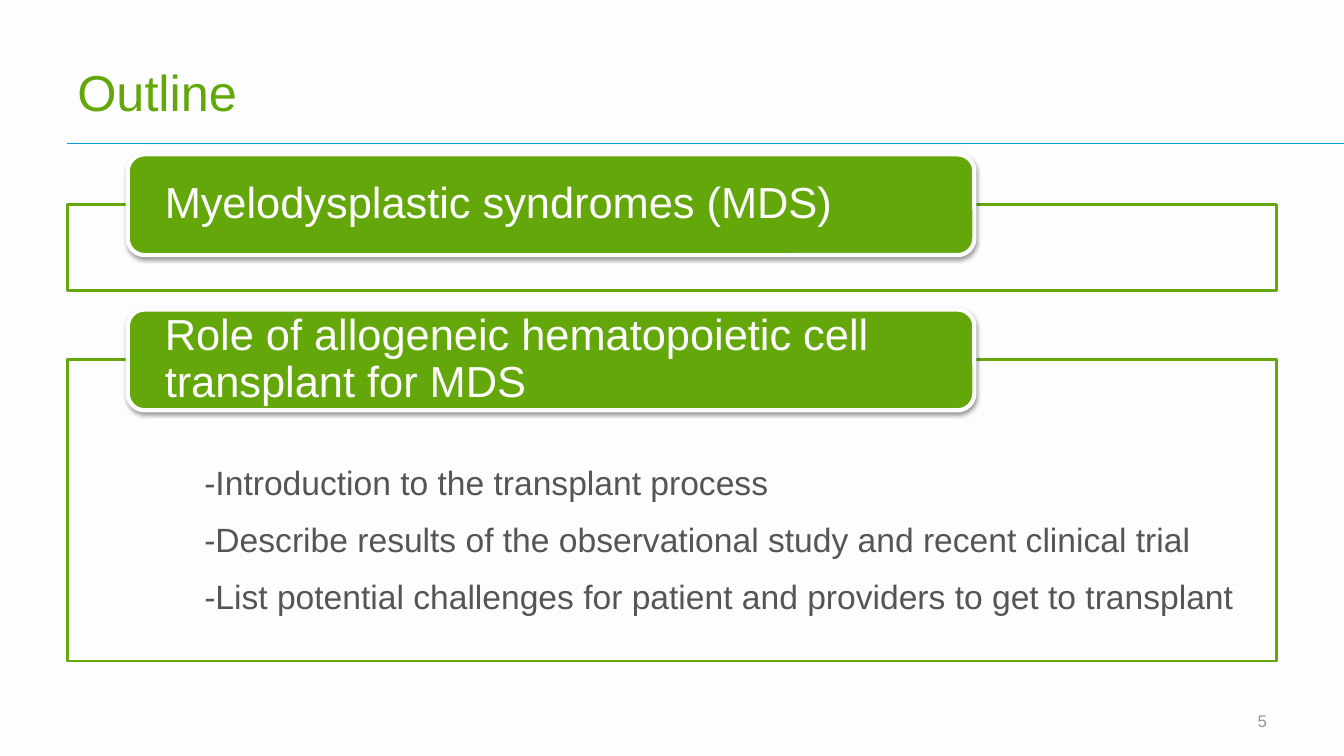
import pptx
import pptx.util
import pptx.dml.color
import pptx.enum.shapes
import pptx.enum.text
import pptx.oxml
import pptx.oxml.ns
from lxml import etree

Cm = pptx.util.Cm
Pt = pptx.util.Pt
ANCHOR = pptx.enum.text.MSO_ANCHOR
ALIGN = pptx.enum.text.PP_ALIGN
SHAPE = pptx.enum.shapes.MSO_SHAPE

COLORS = {
    "background": "FDFDFD",
    "green": "63A70A",
    "rule": "00A0DD",
    "body": "555557",
    "number": "99999A",
    "shadow": "000000",
}
MARGIN, CONTENT_WIDTH = 1.7, 30.48
SECTIONS = [  # heading, top, height of the outlined panel (cm)
    ("Myelodysplastic syndromes (MDS)", 3.89, 2.16),
    ("Role of allogeneic hematopoietic cell transplant for MDS", 7.8, 7.59),
]
POINTS = [
    "-Introduction to the transplant process",
    "-Describe results of the observational study and recent clinical trial",
    "-List potential challenges for patient and providers to get to transplant",
]


def color(name):
    return pptx.dml.color.RGBColor.from_string(COLORS[name])


def write(shape, lines, size, color_name, anchor, align=ALIGN.LEFT):
    frame = shape.text_frame
    frame.word_wrap = True
    frame.vertical_anchor = anchor
    frame.text = "\n".join(lines)
    for para in frame.paragraphs:
        para.alignment = align
        for span in para.runs:
            span.font.name = "Arial"
            span.font.size = Pt(size)
            span.font.color.rgb = color(color_name)
    return frame


def add_text(page, box, *text):
    return write(page.shapes.add_textbox(*map(Cm, box)), *text)


def add_block(page, kind, box, fill, line, width):
    block = page.shapes.add_shape(kind, *map(Cm, box))
    block.shadow.inherit = False
    block.fill.solid()
    block.fill.fore_color.rgb = color(fill)
    block.line.color.rgb = color(line)
    block.line.width = Pt(width)
    return block


def add_drop_shadow(shape):
    effects = shape._element.spPr.find(pptx.oxml.ns.qn("a:effectLst"))
    effects.append(pptx.oxml.parse_xml(
        f'<a:outerShdw {pptx.oxml.ns.nsdecls("a")} blurRad="{Pt(3.1)}" '
        f'dist="{Pt(1.6)}" dir="5400000" rotWithShape="0">'
        f'<a:srgbClr val="{COLORS["shadow"]}"><a:alpha val="38000"/></a:srgbClr>'
        '</a:outerShdw>'))


def add_header(page, left, top, width, height):
    add_text(page, (left, top, width, height), ["Outline"], 36, "green", ANCHOR.BOTTOM)
    # Rule running to the right edge of the slide
    rule_y = Cm(top + height + 0.43)
    rule = page.shapes.add_connector(
        pptx.enum.shapes.MSO_CONNECTOR.STRAIGHT, Cm(left), rule_y, Cm(33.87), rule_y)
    rule.line.color.rgb = color("rule")
    rule.line.width = Pt(0.75)
    etree.SubElement(rule._element.spPr, pptx.oxml.ns.qn("a:effectLst"))


def add_section(page, heading, left, top, width, panel_height):
    # Outlined panel, starting halfway down its heading
    add_block(page, SHAPE.RECTANGLE, (left, top + 1.27, width, panel_height),
              "background", "green", 2)
    # Rounded heading
    tab = add_block(page, SHAPE.ROUNDED_RECTANGLE, (left + 1.52, top, width * 0.7, 2.54),
                    "green", "background", 3)
    add_drop_shadow(tab)
    frame = write(tab, [heading], 31, "background", ANCHOR.MIDDLE)
    frame.margin_left = frame.margin_right = Cm(0.81)
    frame.margin_top = frame.margin_bottom = 0
    frame.paragraphs[0].line_spacing = 0.9


def add_points(page, left, top, width, height):
    frame = add_text(page, (left, top, width, height), POINTS, 24, "body", ANCHOR.TOP)
    frame.word_wrap = False
    for para in frame.paragraphs[1:]:
        para.space_before = Pt(12)


def add_page_number(page, left, top, width, height):
    add_text(page, (left, top, width, height), ["5"], 12, "number",
             ANCHOR.MIDDLE, ALIGN.RIGHT)


def build_outline(deck):
    page = deck.slides.add_slide(deck.slide_layouts[6])
    page.background.fill.solid()
    page.background.fill.fore_color.rgb = color("background")
    add_header(page, MARGIN, 0, CONTENT_WIDTH, 3.18)
    for heading, top, panel_height in SECTIONS:
        add_section(page, heading, MARGIN, top, CONTENT_WIDTH, panel_height)
    add_points(page, 4.9, 11.51, 26.72, 4.19)
    add_page_number(page, 30.48, 17.65, 1.7, 1.02)


def main():
    deck = pptx.Presentation()
    deck.slide_width, deck.slide_height = Cm(33.87), Cm(19.05)
    build_outline(deck)
    deck.save("out.pptx")


if __name__ == "__main__":
    main()
